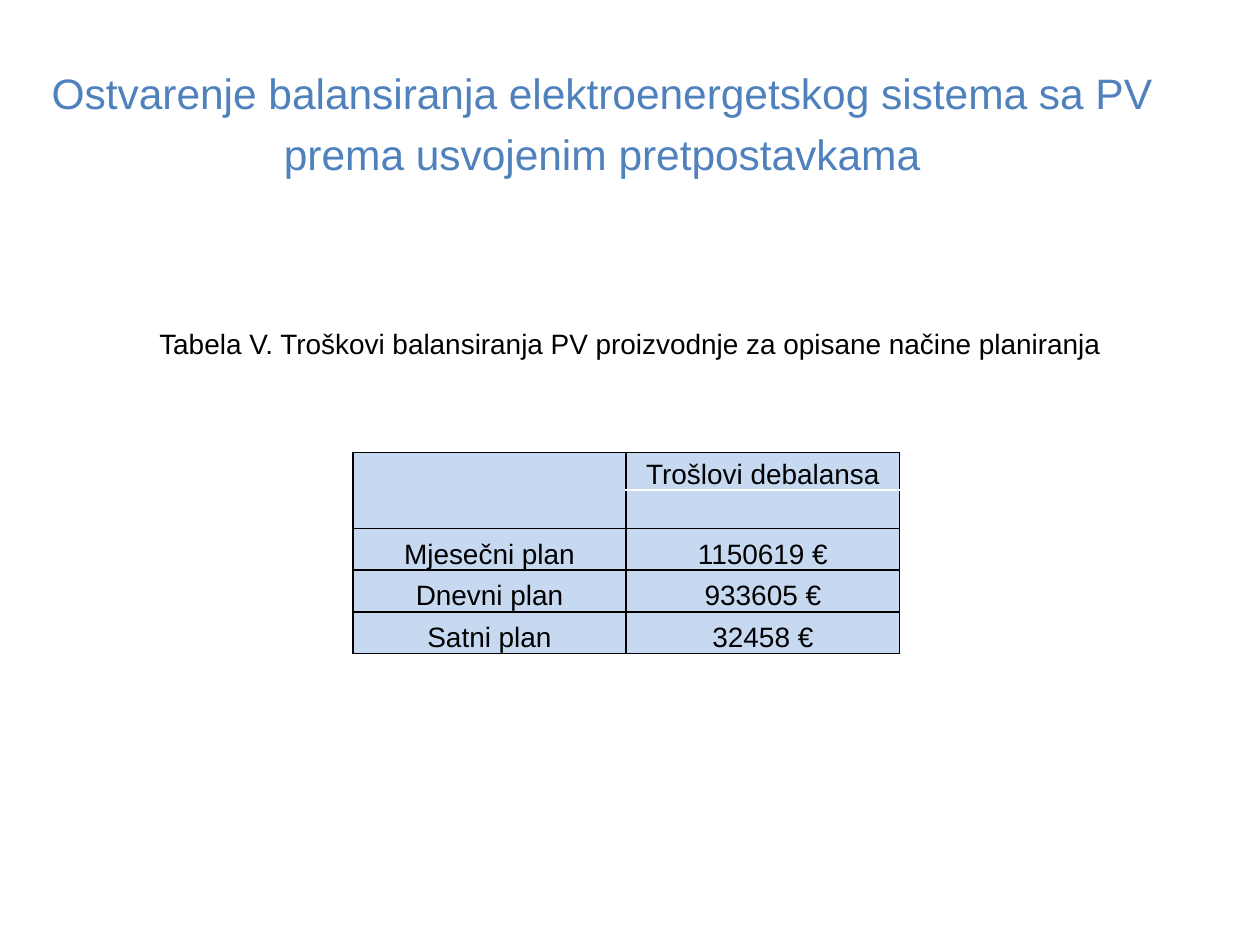
"""Build the slide on balancing costs of PV production."""
from lxml.etree import SubElement
from pptx import Presentation
from pptx.dml.color import RGBColor
from pptx.enum.text import MSO_ANCHOR as Anchor, MSO_AUTO_SIZE as AutoSize, PP_ALIGN as Align
from pptx.oxml import parse_xml
from pptx.oxml.ns import nsdecls, qn
from pptx.util import Inches, Pt

BLACK = RGBColor(0x00, 0x00, 0x00)
TITLE_BLUE = RGBColor(0x4F, 0x81, 0xBD)
CELL_BLUE = RGBColor(0xC6, 0xD9, 0xF1)

TITLE = "Ostvarenje balansiranja elektroenergetskog sistema sa PV prema usvojenim pretpostavkama"
CAPTION = "Tabela V. Troškovi balansiranja PV proizvodnje za opisane načine planiranja"
ROWS = [
    ("", "Trošlovi debalansa"),
    ("", ""),
    ("Mjesečni plan", "1150619 €"),
    ("Dnevni plan", "933605 €"),
    ("Satni plan", "32458 €"),
]
ROW_HEIGHTS = [0.3, 0.29, 0.33, 0.33, 0.33]
COL_WIDTH = 2.17


def write(tf, text, size=16, color=BLACK, spacing=1.15):
    p = tf.paragraphs[0]
    p.alignment = Align.CENTER
    p.line_spacing = spacing
    p.space_before = Pt(0)
    r = p.add_run()
    r.text = text
    r.font.size = Pt(size)
    r.font.name = "Arial"
    r.font.color.rgb = color
    return p


def place(sp, left, top, width, height):
    sp.left, sp.top = Inches(left), Inches(top)
    sp.width, sp.height = Inches(width), Inches(height)
    tf = sp.text_frame
    tf.word_wrap = True
    tf.auto_size = AutoSize.NONE
    return tf


def add_title(s):
    tf = place(s.shapes.title, 0.28, 0.36, 9, 1.8)
    tf.vertical_anchor = Anchor.MIDDLE
    tf.margin_bottom = Inches(0.7)
    write(tf, TITLE, size=24.3, color=TITLE_BLUE, spacing=1.2)


def add_caption(s):
    tf = place(s.placeholders[1], 0.5, 2.18, 9, 4.96)
    tf.vertical_anchor = Anchor.TOP
    tf.margin_top = Inches(0.37)
    pPr = write(tf, CAPTION)._p.get_or_add_pPr()
    pPr.set("marL", "0")
    pPr.set("indent", "0")
    SubElement(pPr, qn("a:buNone"))


def set_borders(cell, sides):
    tcPr = cell._tc.get_or_add_tcPr()
    for i, side in enumerate(sides):
        tcPr.insert(i, parse_xml(
            f'<a:ln{side} {nsdecls("a")} w="{Pt(1)}"><a:solidFill>'
            f'<a:srgbClr val="{BLACK}"/></a:solidFill></a:ln{side}>'))


def format_cell(cell, text, sides="LRTB"):
    cell.fill.solid()
    cell.fill.fore_color.rgb = CELL_BLUE
    cell.margin_left = cell.margin_right = Inches(0.07)
    cell.margin_top = cell.margin_bottom = 0
    cell.vertical_anchor = Anchor.BOTTOM
    if text:
        write(cell.text_frame, text)
    set_borders(cell, sides)


def add_cost_table(s):
    frame = s.shapes.add_table(len(ROWS), 2, Inches(2.8), Inches(3.59),
                               Inches(2 * COL_WIDTH), Inches(sum(ROW_HEIGHTS)))
    table = frame.table
    table.first_row = table.horz_banding = False
    for col in table.columns:
        col.width = Inches(COL_WIDTH)
    open_sides = {(0, 1): "LRT", (1, 1): "LRB"}
    for i, (row, height) in enumerate(zip(ROWS, ROW_HEIGHTS)):
        table.rows[i].height = Inches(height)
        for j, text in enumerate(row):
            format_cell(table.cell(i, j), text, open_sides.get((i, j), "LRTB"))
    table.cell(0, 0).merge(table.cell(1, 0))


def main():
    prs = Presentation()
    prs.slide_width, prs.slide_height = Inches(10), Inches(7.5)
    s = prs.slides.add_slide(prs.slide_layouts[1])
    add_title(s)
    add_caption(s)
    add_cost_table(s)
    prs.save("out.pptx")


if __name__ == "__main__":
    main()
